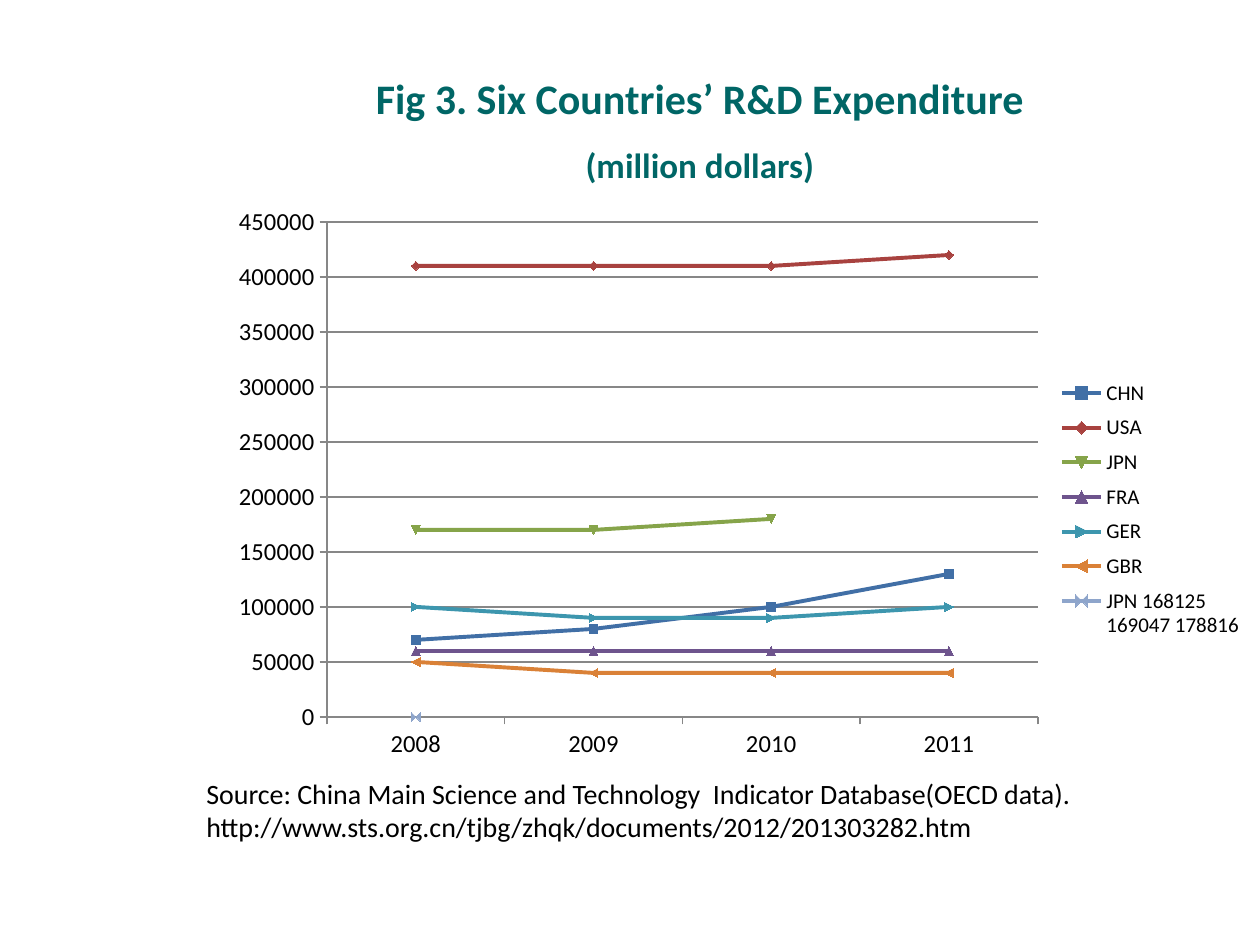
from dataclasses import dataclass

import pptx
import pptx.chart.data
import pptx.dml.color
import pptx.enum.chart
import pptx.enum.text
import pptx.oxml
import pptx.oxml.ns
import pptx.util

EMU_PER_PX = 914400 / 126


@dataclass(frozen=True)
class Theme:
    font: str = "Calibri"
    heading: str = "006666"
    body: str = "000000"
    grid: str = "878787"
    title_pt: int = 24
    unit_pt: int = 20
    source_pt: int = 16
    axis_pt: int = 14
    legend_pt: int = 12
    line_pt: float = 2.25
    grid_pt: float = 0.75


@dataclass(frozen=True)
class Box:
    left: int
    top: int
    width: int
    height: int

    def emu(self) -> list[int]:
        return [px(v) for v in (self.left, self.top, self.width, self.height)]


@dataclass(frozen=True)
class Country:
    name: str
    spending: tuple[int | None, ...]
    color: str


THEME = Theme()
TITLE_BOX = Box(203, 38, 994, 157)
CHART_BOX = Box(218, 195, 1042, 576)
PLOT_BOX = Box(327, 222, 711, 495)
LEGEND_BOX = Box(1053, 371, 195, 277)
SOURCE_BOX = Box(194, 770, 1032, 81)
YEARS = ("2008", "2009", "2010", "2011")
COUNTRIES = (
    Country("CHN", (70000, 80000, 100000, 130000), "416FA6"),
    Country("USA", (410000, 410000, 410000, 420000), "A8423F"),
    Country("JPN", (170000, 170000, 180000, None), "86A44A"),
    Country("FRA", (60000, 60000, 60000, 60000), "6E548D"),
    Country("GER", (100000, 90000, 90000, 100000), "3D96AE"),
    Country("GBR", (50000, 40000, 40000, 40000), "DA8137"),
    Country("JPN 168125 169047 178816", (0, None, None, None), "8EA5CB"),
)


def px(length: int) -> int:
    return round(length * EMU_PER_PX)


def rgb(color: str) -> pptx.dml.color.RGBColor:
    return pptx.dml.color.RGBColor.from_string(color)


def style_font(font, size: int, color: str, bold: bool = False) -> None:
    font.name = THEME.font
    font.size = pptx.util.Pt(size)
    font.bold = bold
    font.color.rgb = rgb(color)


def add_run(paragraph, text: str, size: int, color: str, bold: bool = False) -> None:
    run = paragraph.add_run()
    run.text = text
    style_font(run.font, size, color, bold)


def add_paragraph_box(slide, box: Box, anchor):
    frame = slide.shapes.add_textbox(*box.emu()).text_frame
    frame.word_wrap = True
    frame.vertical_anchor = anchor
    return frame.paragraphs[0]


def manual_layout(box: Box, target: str = ""):
    fractions = {
        "x": (box.left - CHART_BOX.left) / CHART_BOX.width,
        "y": (box.top - CHART_BOX.top) / CHART_BOX.height,
        "w": box.width / CHART_BOX.width,
        "h": box.height / CHART_BOX.height,
    }
    modes = "".join(f'<c:{side}Mode val="edge"/>' for side in "xy")
    sizes = "".join(f'<c:{k} val="{v:.4f}"/>' for k, v in fractions.items())
    return pptx.oxml.parse_xml(
        f'<c:layout {pptx.oxml.ns.nsdecls("c")}><c:manualLayout>'
        f"{target}{modes}{sizes}</c:manualLayout></c:layout>"
    )


def place_part(part, layout, index: int) -> None:
    for automatic in part.findall(pptx.oxml.ns.qn("c:layout")):
        part.remove(automatic)
    part.insert(index, layout)


def style_rule(line) -> None:
    line.color.rgb = rgb(THEME.grid)
    line.width = pptx.util.Pt(THEME.grid_pt)


def add_spending_chart(slide) -> None:
    spending = pptx.chart.data.CategoryChartData()
    spending.categories = YEARS
    for country in COUNTRIES:
        spending.add_series(country.name, country.spending)
    chart = slide.shapes.add_chart(
        pptx.enum.chart.XL_CHART_TYPE.LINE_MARKERS, *CHART_BOX.emu(), spending
    ).chart
    chart.has_title = False
    style_font(chart.font, THEME.legend_pt, THEME.body)
    chart.has_legend = True
    chart.legend.position = pptx.enum.chart.XL_LEGEND_POSITION.RIGHT
    chart.legend.include_in_layout = False
    style_font(chart.legend.font, THEME.legend_pt, THEME.body)

    for axis in (chart.category_axis, chart.value_axis):
        axis.major_tick_mark = pptx.enum.chart.XL_TICK_MARK.OUTSIDE
        axis.minor_tick_mark = pptx.enum.chart.XL_TICK_MARK.NONE
        style_font(axis.tick_labels.font, THEME.axis_pt, THEME.body)
        style_rule(axis.format.line)
    amounts = chart.value_axis
    amounts.minimum_scale, amounts.maximum_scale = 0, 450000
    amounts.major_unit = 50000
    amounts.has_major_gridlines = True
    style_rule(amounts.major_gridlines.format.line)

    chart.plots[0].vary_by_categories = False
    for trend, country in zip(chart.plots[0].series, COUNTRIES):
        trend.smooth = False
        trend.format.line.color.rgb = rgb(country.color)
        trend.format.line.width = pptx.util.Pt(THEME.line_pt)
        trend.marker.format.fill.solid()
        trend.marker.format.fill.fore_color.rgb = rgb(country.color)
        trend.marker.format.line.color.rgb = rgb(country.color)

    chart_parts = chart.element.chart
    inner = '<c:layoutTarget val="inner"/>'
    place_part(chart_parts.plotArea, manual_layout(PLOT_BOX, inner), 0)
    legend = chart_parts.find(pptx.oxml.ns.qn("c:legend"))
    place_part(legend, manual_layout(LEGEND_BOX), 1)


def main() -> None:
    deck = pptx.Presentation()
    deck.slide_width, deck.slide_height = px(1260), px(945)
    slide = deck.slides.add_slide(deck.slide_layouts[6])

    heading = add_paragraph_box(slide, TITLE_BOX, pptx.enum.text.MSO_ANCHOR.MIDDLE)
    heading.alignment = pptx.enum.text.PP_ALIGN.CENTER
    heading.line_spacing = 1.5
    add_run(heading, "Fig 3. Six Countries’ R&D Expenditure", THEME.title_pt, THEME.heading, True)
    heading.add_line_break()
    add_run(heading, "(million dollars)", THEME.unit_pt, THEME.heading, True)

    add_spending_chart(slide)

    source = add_paragraph_box(slide, SOURCE_BOX, pptx.enum.text.MSO_ANCHOR.TOP)
    add_run(
        source,
        "Source: China Main Science and Technology  Indicator Database(OECD data). "
        "http://www.sts.org.cn/tjbg/zhqk/documents/2012/201303282.htm",
        THEME.source_pt,
        THEME.body,
    )
    deck.save("out.pptx")


if __name__ == "__main__":
    main()
